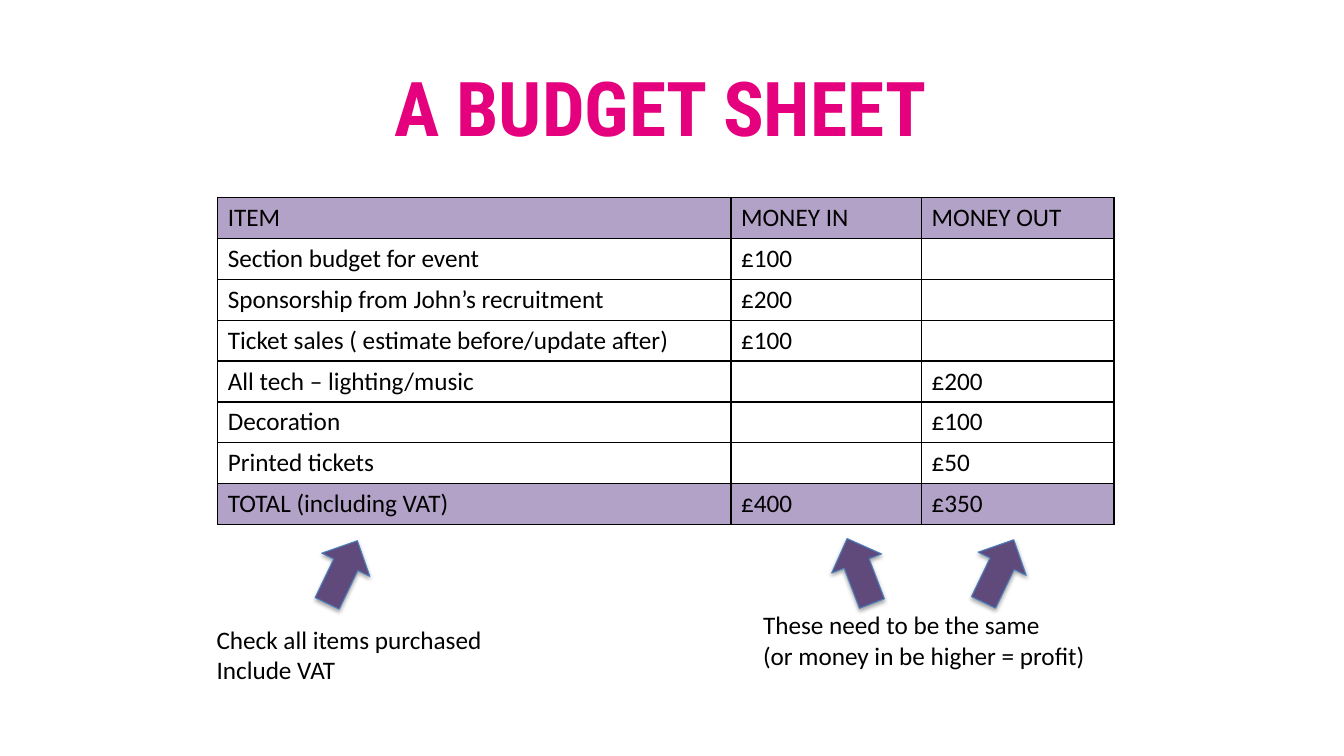
from dataclasses import dataclass

from lxml.etree import SubElement
from pptx import Presentation
from pptx.dml.color import RGBColor
from pptx.enum.shapes import MSO_SHAPE
from pptx.enum.text import MSO_ANCHOR, PP_ALIGN
from pptx.oxml.ns import qn
from pptx.util import Emu, Pt

EMU_PER_PX = 9144  # 100 px to the inch
BLACK, WHITE, PINK = "000000", "FFFFFF", "E5007E"
LILAC, PURPLE, BLUE = "B3A2C7", "604A7B", "4B7EBC"


@dataclass
class Label:
    left: int
    top: int
    width: int
    height: int
    lines: list[str]
    font: str = "Calibri"
    size: int = 18
    color: str = BLACK
    bold: bool = False
    align: PP_ALIGN = PP_ALIGN.LEFT
    anchor: MSO_ANCHOR = MSO_ANCHOR.TOP
    wrap: bool = False


@dataclass
class Arrow:
    left: int
    top: int
    rotation: float


LABELS = [
    Label(205, 64, 900, 82, ["A BUDGET SHEET"], "Roboto Condensed", 54, PINK,
          True, PP_ALIGN.CENTER, MSO_ANCHOR.MIDDLE, True),
    Label(747, 600, 343, 71,
          ["These need to be the same", "(or money in be higher = profit)"]),
    Label(205, 614, 286, 71, ["Check all items purchased", "Include VAT"]),
]
ARROWS = [Arrow(826, 532, 339.1), Arrow(964, 532, 25.7), Arrow(313, 533, 25.7)]
COLUMNS = [509, 189, 191]
BUDGET = [
    ("ITEM", "MONEY IN", "MONEY OUT"),
    ("Section budget for event", "£100", ""),
    ("Sponsorship from John’s recruitment", "£200", ""),
    ("Ticket sales ( estimate before/update after)", "£100", ""),
    ("All tech – lighting/music", "", "£200"),
    ("Decoration", "", "£100"),
    ("Printed tickets", "", "£50"),
    ("TOTAL (including VAT)", "£400", "£350"),
]


def px(n: int) -> Emu:
    return Emu(n * EMU_PER_PX)


def rgb(color: str) -> RGBColor:
    return RGBColor.from_string(color)


def style_font(p, font: str, size: int, color: str, bold: bool = False) -> None:
    p.font.name = font
    p.font.size = Pt(size)
    p.font.bold = bold
    p.font.color.rgb = rgb(color)


def add_label(slide, label: Label) -> None:
    box = slide.shapes.add_textbox(px(label.left), px(label.top),
                                   px(label.width), px(label.height))
    tf = box.text_frame
    tf.word_wrap = label.wrap
    tf.vertical_anchor = label.anchor
    tf.text = "\n".join(label.lines)
    for p in tf.paragraphs:
        p.alignment = label.align
        style_font(p, label.font, label.size, label.color, label.bold)


def add_borders(cell) -> None:
    props = cell._tc.get_or_add_tcPr()
    for side in ("a:lnL", "a:lnR", "a:lnT", "a:lnB"):
        line = SubElement(props, qn(side), w=str(Pt(1)))
        fill = SubElement(line, qn("a:solidFill"))
        SubElement(fill, qn("a:srgbClr"), val=BLACK)


def add_budget(slide) -> None:
    frame = slide.shapes.add_table(len(BUDGET), len(COLUMNS), px(216), px(196),
                                   px(sum(COLUMNS)), px(324))
    table = frame.table
    table.first_row = table.horz_banding = False
    for column, width in zip(table.columns, COLUMNS):
        column.width = px(width)
    for i, row in enumerate(BUDGET):
        for j, text in enumerate(row):
            cell = table.cell(i, j)
            cell.text = text
            style_font(cell.text_frame.paragraphs[0], "Calibri", 18, BLACK)
            add_borders(cell)
            cell.fill.solid()
            is_band = i in (0, len(BUDGET) - 1)
            cell.fill.fore_color.rgb = rgb(LILAC if is_band else WHITE)


def add_arrow(slide, arrow: Arrow) -> None:
    sp = slide.shapes.add_shape(MSO_SHAPE.UP_ARROW, px(arrow.left), px(arrow.top),
                                px(53), px(69))
    sp.rotation = arrow.rotation
    sp.fill.solid()
    sp.fill.fore_color.rgb = rgb(PURPLE)
    sp.line.color.rgb = rgb(BLUE)
    sp.line.width = Pt(0.75)
    # Soft shadow falling straight down
    sp.shadow.inherit = False
    effects = sp._element.spPr.find(qn("a:effectLst"))
    shadow = SubElement(effects, qn("a:outerShdw"), blurRad=str(Pt(3.1)),
                        dist=str(Pt(1.8)), dir="5400000", rotWithShape="0")
    color = SubElement(shadow, qn("a:srgbClr"), val=BLACK)
    SubElement(color, qn("a:alpha"), val="35000")


def main() -> None:
    prs = Presentation()
    prs.slide_width, prs.slide_height = px(1333), px(750)
    slide = prs.slides.add_slide(prs.slide_layouts[6])

    # Budget table
    add_budget(slide)
    # Arrows pointing at the totals
    for arrow in ARROWS:
        add_arrow(slide, arrow)
    # Title and notes
    for label in LABELS:
        add_label(slide, label)

    prs.save("out.pptx")


if __name__ == "__main__":
    main()
